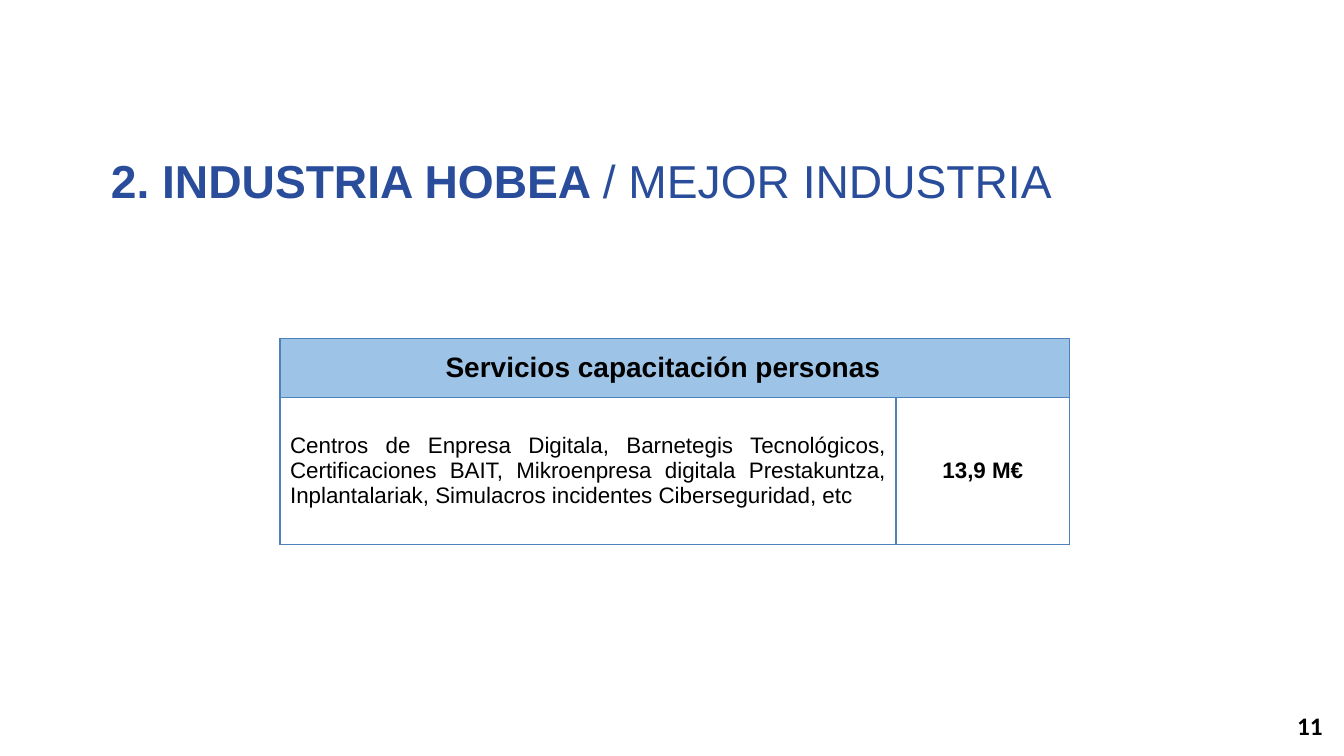
from dataclasses import dataclass

from lxml import etree
from pptx import Presentation
from pptx.dml.color import RGBColor
from pptx.enum.text import MSO_ANCHOR, MSO_AUTO_SIZE, PP_ALIGN
from pptx.oxml.ns import qn
from pptx.util import Pt

LEFT, CENTER, JUSTIFY = PP_ALIGN.LEFT, PP_ALIGN.CENTER, PP_ALIGN.JUSTIFY
MIDDLE = MSO_ANCHOR.MIDDLE
NO_AUTOFIT = MSO_AUTO_SIZE.NONE


@dataclass(frozen=True)
class Theme:
    font: str = "Arial"
    number_font: str = "Calibri"
    title_color: str = "294D9B"
    text_color: str = "000000"
    header_fill: str = "9DC3E6"
    border: str = "4F81BD"
    title_size: float = 33
    header_size: float = 20
    body_size: float = 16
    number_size: float = 18


THEME = Theme()


def style_run(r, size, color=THEME.text_color, bold=False, font=THEME.font):
    r.font.name = font
    r.font.size = Pt(size)
    r.font.bold = bold
    r.font.color.rgb = RGBColor.from_string(color)


def add_title(s, box, bold_text, plain_text):
    sp = s.shapes.title
    sp.left, sp.top, sp.width, sp.height = (Pt(v) for v in box)
    tf = sp.text_frame
    tf.word_wrap = True
    tf.auto_size = NO_AUTOFIT
    tf.vertical_anchor = MIDDLE
    p = tf.paragraphs[0]
    p.alignment = LEFT
    for text, bold in ((bold_text, True), (plain_text, False)):
        r = p.add_run()
        r.text = text
        style_run(r, THEME.title_size, THEME.title_color, bold)


def set_borders(cell):
    tc_pr = cell._tc.get_or_add_tcPr()
    for i, side in enumerate(("lnL", "lnR", "lnT", "lnB")):
        ln = etree.Element(qn(f"a:{side}"), w=str(Pt(1)))
        fill = etree.SubElement(ln, qn("a:solidFill"))
        etree.SubElement(fill, qn("a:srgbClr"), val=THEME.border)
        tc_pr.insert(i, ln)


def fill_cell(cell, text, size, align, bold):
    cell.text_frame.text = text
    cell.vertical_anchor = MIDDLE
    p = cell.text_frame.paragraphs[0]
    p.alignment = align
    style_run(p.runs[0], size, bold=bold)


def add_budget_table(s, box, header, service, amount):
    left, top, width, height = box
    header_height, amount_width = 42, 124
    table = s.shapes.add_table(2, 2, Pt(left), Pt(top), Pt(width), Pt(height)).table
    table.first_row = table.horz_banding = False
    table.columns[0].width = Pt(width - amount_width)
    table.columns[1].width = Pt(amount_width)
    table.rows[0].height = Pt(header_height)
    table.rows[1].height = Pt(height - header_height)
    for cell in table.iter_cells():
        cell.fill.background()
        set_borders(cell)
    title_cell = table.cell(0, 0)
    title_cell.merge(table.cell(0, 1))
    title_cell.fill.solid()
    title_cell.fill.fore_color.rgb = RGBColor.from_string(THEME.header_fill)
    title_cell.margin_right = Pt(24)
    fill_cell(title_cell, header, THEME.header_size, CENTER, True)
    fill_cell(table.cell(1, 0), service, THEME.body_size, JUSTIFY, False)
    fill_cell(table.cell(1, 1), amount, THEME.body_size, CENTER, True)


def add_page_number(s, box, number):
    tf = s.shapes.add_textbox(*(Pt(v) for v in box)).text_frame
    tf.word_wrap = True
    tf.text = number
    style_run(tf.paragraphs[0].runs[0], THEME.number_size, bold=True,
              font=THEME.number_font)


def main():
    prs = Presentation()
    prs.slide_width, prs.slide_height = Pt(960), Pt(540)
    s = prs.slides.add_slide(prs.slide_layouts[5])
    add_title(s, (72, 104.5, 806, 47.5), "2. INDUSTRIA HOBEA ", "/ MEJOR INDUSTRIA")
    add_budget_table(
        s, (200, 242, 564, 147),
        "Servicios capacitación personas",
        "Centros de Enpresa Digitala, Barnetegis Tecnológicos, Certificaciones BAIT, "
        "Mikroenpresa digitala Prestakuntza, Inplantalariak, Simulacros incidentes "
        "Ciberseguridad, etc",
        "13,9 M€")
    add_page_number(s, (919.5, 504, 33, 29), "11")
    prs.save("out.pptx")


if __name__ == "__main__":
    main()
